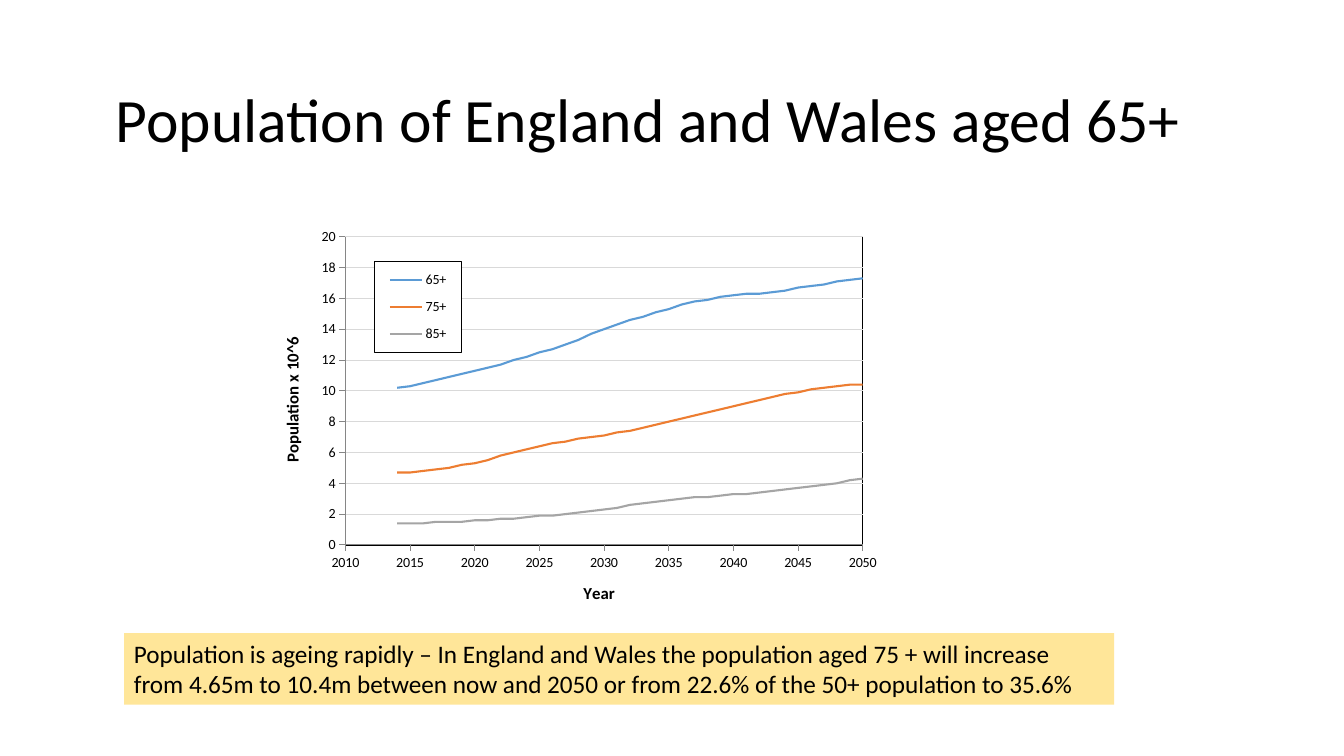
from lxml import etree
from pptx import Presentation
from pptx.chart.data import XyChartData
from pptx.dml.color import RGBColor
from pptx.enum.chart import XL_CHART_TYPE as ChartType
from pptx.enum.chart import XL_LEGEND_POSITION as LegendPosition
from pptx.enum.chart import XL_TICK_MARK as TickMark
from pptx.enum.shapes import MSO_SHAPE as Shape
from pptx.enum.text import MSO_ANCHOR as Anchor
from pptx.enum.text import PP_ALIGN as Align
from pptx.oxml import parse_xml
from pptx.oxml.ns import nsdecls, qn
from pptx.util import Inches, Pt

BLACK = RGBColor(0x00, 0x00, 0x00)
GRID = RGBColor(0xD9, 0xD9, 0xD9)
AXIS = RGBColor(0x86, 0x86, 0x86)
SAND = RGBColor(0xFF, 0xE6, 0x99)
BLUE = RGBColor(0x5B, 0x9B, 0xD5)
ORANGE = RGBColor(0xED, 0x7D, 0x31)
GREY = RGBColor(0xA5, 0xA5, 0xA5)

AGE_GROUPS = [
    ("65+", BLUE, [
        10.2, 10.3, 10.5, 10.7, 10.9, 11.1, 11.3, 11.5, 11.7, 12, 12.2, 12.5, 12.7,
        13, 13.3, 13.7, 14, 14.3, 14.6, 14.8, 15.1, 15.3, 15.6, 15.8, 15.9,
        16.1, 16.2, 16.3, 16.3, 16.4, 16.5, 16.7, 16.8, 16.9, 17.1, 17.2, 17.3]),
    ("75+", ORANGE, [
        4.7, 4.7, 4.8, 4.9, 5, 5.2, 5.3, 5.5, 5.8, 6, 6.2, 6.4, 6.6,
        6.7, 6.9, 7, 7.1, 7.3, 7.4, 7.6, 7.8, 8, 8.2, 8.4, 8.6,
        8.8, 9, 9.2, 9.4, 9.6, 9.8, 9.9, 10.1, 10.2, 10.3, 10.4, 10.4]),
    ("85+", GREY, [
        1.4, 1.4, 1.4, 1.5, 1.5, 1.5, 1.6, 1.6, 1.7, 1.7, 1.8, 1.9, 1.9,
        2, 2.1, 2.2, 2.3, 2.4, 2.6, 2.7, 2.8, 2.9, 3, 3.1, 3.1,
        3.2, 3.3, 3.3, 3.4, 3.5, 3.6, 3.7, 3.8, 3.9, 4, 4.2, 4.3]),
]


def write(frame, text, size, bold=False, align=Align.LEFT, spacing=1.0):
    paragraph = frame.paragraphs[0]
    paragraph.alignment = align
    paragraph.line_spacing = spacing
    run = paragraph.add_run()
    run.text = text
    run.font.size = Pt(size)
    run.font.bold = bold
    run.font.name = "Calibri"
    run.font.color.rgb = BLACK


def manual_layout(x, y, w, h, inner=False):
    layout = etree.Element(qn("c:layout"))
    manual = etree.SubElement(layout, qn("c:manualLayout"))
    settings = [("layoutTarget", "inner")] if inner else []
    settings += [("xMode", "edge"), ("yMode", "edge"),
                 ("x", x), ("y", y), ("w", w), ("h", h)]
    for tag, value in settings:
        etree.SubElement(manual, qn(f"c:{tag}")).set("val", str(value))
    return layout


prs = Presentation()
prs.slide_width = Inches(13.33)
prs.slide_height = Inches(7.5)
slide = prs.slides.add_slide(prs.slide_layouts[6])

heading = slide.shapes.add_textbox(Inches(1.05), Inches(0.49), Inches(11.5), Inches(1.45))
heading.text_frame.word_wrap = True
heading.text_frame.vertical_anchor = Anchor.MIDDLE
write(heading.text_frame, "Population of England and Wales aged 65+", 44, spacing=0.9)

projection = XyChartData()
for name, color, millions in AGE_GROUPS:
    group = projection.add_series(name)
    for year, value in zip(range(2014, 2051), millions):
        group.add_data_point(year, value)
chart = slide.shapes.add_chart(
    ChartType.XY_SCATTER_LINES_NO_MARKERS,
    Inches(2.39), Inches(2.05), Inches(6.77), Inches(4.1), projection).chart
chart.has_title = False
chart.font.size = Pt(10)
chart.font.name = "Calibri"
chart.font.color.rgb = BLACK
chart.plots[0].vary_by_categories = False
for series, (name, color, millions) in zip(chart.plots[0].series, AGE_GROUPS):
    series.smooth = False
    series.format.line.color.rgb = color
    series.format.line.width = Pt(1.5)

years, population = chart.category_axis, chart.value_axis
for axis, title, low, high, step in [
        (years, "Year", 2010, 2050, 5),
        (population, "Population x 10^6", 0, 20, 2)]:
    axis.minimum_scale, axis.maximum_scale, axis.major_unit = low, high, step
    axis.major_tick_mark = TickMark.OUTSIDE
    axis.minor_tick_mark = TickMark.NONE
    axis.tick_labels.number_format = "General"
    axis.tick_labels.number_format_is_linked = False
    axis.format.line.color.rgb = AXIS
    axis.format.line.width = Pt(0.75)
    write(axis.axis_title.text_frame, title, 12, bold=True, align=Align.CENTER)
years.has_major_gridlines = False
population.has_major_gridlines = True
population.major_gridlines.format.line.color.rgb = GRID
population.major_gridlines.format.line.width = Pt(0.75)

chart.has_legend = True
chart.legend.position = LegendPosition.RIGHT
chart.legend.include_in_layout = False
chart.legend.font.size = Pt(10)
chart.legend.font.name = "Calibri"
chart.legend.font.color.rgb = BLACK

frame_xml = (f'<c:spPr {nsdecls("c", "a")}><a:{{fill}}/><a:ln w="9525">'
             f'<a:solidFill><a:srgbClr val="{BLACK}"/></a:solidFill></a:ln></c:spPr>')
plot_area = chart.plots[0]._element.getparent()
for layout in plot_area.findall(qn("c:layout")):
    plot_area.remove(layout)
plot_area.insert(0, manual_layout(0.153, 0.073, 0.758, 0.746, inner=True))
plot_area.append(parse_xml(frame_xml.format(fill="noFill")))

legend = chart.legend._element
for layout in legend.findall(qn("c:layout")):
    legend.remove(layout)
legend.find(qn("c:legendPos")).addnext(manual_layout(0.196, 0.132, 0.127, 0.222))
white_fill = 'solidFill><a:srgbClr val="FFFFFF"/></a:solidFill'
legend.find(qn("c:overlay")).addnext(
    parse_xml(frame_xml.replace("<a:{fill}/>", f"<a:{white_fill}>")))

message = slide.shapes.add_shape(
    Shape.RECTANGLE, Inches(1.23), Inches(6.28), Inches(9.82), Inches(0.71))
message.shadow.inherit = False
message.fill.solid()
message.fill.fore_color.rgb = SAND
message.line.fill.background()
message.text_frame.word_wrap = True
message.text_frame.vertical_anchor = Anchor.TOP
write(message.text_frame,
      "Population is ageing rapidly – In England and Wales the population aged 75 + "
      "will increase from 4.65m to 10.4m between now and 2050 or from 22.6% of the "
      "50+ population to 35.6%", 18)

prs.save("out.pptx")
